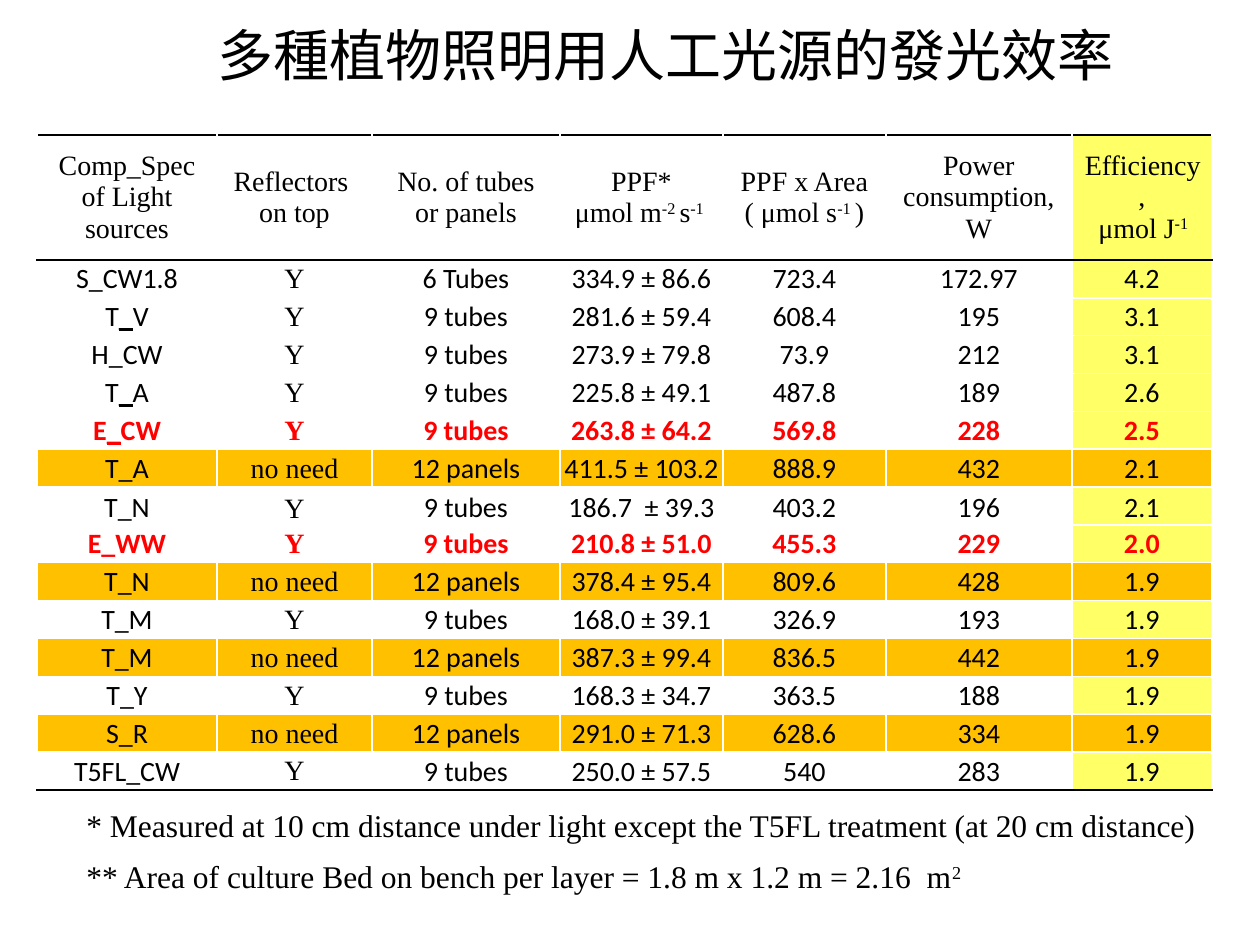
"""Builds a slide comparing the luminous efficiency of plant lighting sources."""
from lxml import etree
from pptx import Presentation, util as u
from pptx.dml.color import RGBColor
from pptx.enum import text
from pptx.oxml.ns import qn

PX = 914400 // 126
SERIF, SANS, CJK = "Times New Roman", "Calibri", "Noto Sans CJK SC"
BLACK, WHITE, RED, YELLOW, ORANGE = "000000", "FFFFFF", "FF0000", "FFFF66", "FFC000"

TITLE = "多種植物照明用人工光源的發光效率"
# "|" parts the runs: "^" raises a run, "~" underlines it, "\v" breaks the line.
HEADINGS = [
    "Comp_Spec of Light sources",
    "Reflectors |\v|on top",
    "No. of tubes or panels",
    "PPF*\nμmol m|^-2 |s|^-1 ",
    "PPF x Area\n( μmol s|^-1 |)",
    "Power consumption, W",
    "Efficiency,\n μmol J|^-1 ",
]
LIGHTS = [
    ("S_CW1.8", "Y", "6 Tubes", "334.9 ± 86.6", "723.4", "172.97", "4.2"),
    ("T|~_|V", "Y", "9 tubes", "281.6 ± 59.4", "608.4", "195", "3.1"),
    ("H_CW", "Y", "9 tubes", "273.9 ± 79.8", "73.9", "212", "3.1"),
    ("T|~_|A", "Y", "9 tubes", "225.8 ± 49.1", "487.8", "189", "2.6"),
    ("E|~_|CW", "Y", "9 tubes", "263.8 ± 64.2", "569.8", "228", "2.5"),
    ("T_A", "no need", "12 panels", "411.5 ± 103.2", "888.9", "432", "2.1"),
    ("T_N", "Y", "9 tubes", "186.7  ± 39.3", "403.2", "196", "2.1"),
    ("E_WW", "Y", "9 tubes", "210.8 ± 51.0", "455.3", "229", "2.0"),
    ("T_N", "no need", "12 panels", "378.4 ± 95.4", "809.6", "428", "1.9"),
    ("T_M", "Y", "9 tubes", "168.0 ± 39.1", "326.9", "193", "1.9"),
    ("T_M", "no need", "12 panels", "387.3 ± 99.4", "836.5", "442", "1.9"),
    ("T_Y", "Y", "9 tubes", "168.3 ± 34.7", "363.5", "188", "1.9"),
    ("S_R", "no need", "12 panels", "291.0 ± 71.3", "628.6", "334", "1.9"),
    ("T5FL_CW", "Y", "9 tubes", "250.0 ± 57.5", "540", "283", "1.9"),
]
NOTES = [
    ("* Measured at 10 cm distance under light except the T5FL treatment (at 20 cm distance)", 800, 1147),
    ("** Area of culture Bed on bench per layer = 1.8 m x 1.2 m = 2.16  m|^2", 851, 926),
]
COLUMN_WIDTHS = [180, 155, 188, 163, 163, 186, 140]
TABLE_LEFT, TABLE_TOP, TABLE_HEIGHT, HEADING_HEIGHT = 37, 135, 655, 125
REFLECTOR, AREA, EFFICIENCY = 1, 4, 6
BOTTOM_ROW = 7


def color(value):
    return RGBColor.from_string(value)


def write(frame, markup, face, size, ink=BLACK, bold=False, align=text.PP_ALIGN.CENTER):
    for index, line in enumerate(markup.split("\n")):
        paragraph = frame.add_paragraph() if index else frame.paragraphs[0]
        paragraph.alignment = align
        font = paragraph.font
        font.name, font.size, font.bold = face, u.Pt(size), bold
        font.color.rgb = color(ink)
        for piece in line.split("|"):
            if piece == "\v":
                paragraph.add_line_break()
                continue
            run = paragraph.add_run()
            run.text = piece.lstrip("^~")
            run.font.name, run.font.size, run.font.bold = face, u.Pt(size), bold
            run.font.color.rgb = color(ink)
            if piece.startswith("^"):
                run._r.get_or_add_rPr().set("baseline", "30000")
            elif piece.startswith("~"):
                run.font.underline = True


def border(cell, top, bottom):
    properties = cell._tc.get_or_add_tcPr()
    for side, ink in (("L", WHITE), ("R", WHITE), ("T", top), ("B", bottom)):
        line = etree.SubElement(properties, qn(f"a:ln{side}"), w=str(u.Pt(1)))
        fill = etree.SubElement(line, qn("a:solidFill"))
        etree.SubElement(fill, qn("a:srgbClr"), val=ink)


def add_title(slide):
    title = slide.shapes.title
    title.left, title.top, title.width, title.height = (n * PX for n in (115, 16, 1102, 76))
    title.text_frame.vertical_anchor = text.MSO_ANCHOR.MIDDLE
    write(title.text_frame, TITLE, CJK, 32)
    run = title.text_frame.paragraphs[0].runs[0]
    etree.SubElement(run._r.get_or_add_rPr(), qn("a:ea"), typeface=CJK)


def add_lights(slide):
    rows = [HEADINGS, *LIGHTS]
    table = slide.shapes.add_table(
        len(rows), len(HEADINGS), TABLE_LEFT * PX, TABLE_TOP * PX,
        sum(COLUMN_WIDTHS) * PX, TABLE_HEIGHT * PX).table
    table.first_row = table.horz_banding = False
    for column, width in zip(table.columns, COLUMN_WIDTHS):
        column.width = width * PX
    light_height = (TABLE_HEIGHT - HEADING_HEIGHT) * PX // len(LIGHTS)
    for r, values in enumerate(rows):
        heading = r == 0
        table.rows[r].height = HEADING_HEIGHT * PX if heading else light_height
        panel = values[REFLECTOR] == "no need"
        own = values[0].startswith("E")
        top = BLACK if r < 2 else WHITE
        bottom = BLACK if r in (0, len(LIGHTS)) else WHITE
        for c, value in enumerate(values):
            cell = table.cell(r, c)
            border(cell, top, bottom)
            cell.fill.solid()
            cell.fill.fore_color.rgb = color(
                ORANGE if panel else YELLOW if c == EFFICIENCY else WHITE)
            cell.vertical_anchor = (
                text.MSO_ANCHOR.BOTTOM if r == BOTTOM_ROW else text.MSO_ANCHOR.MIDDLE)
            if not heading or c == AREA:
                cell.margin_left = cell.margin_right = cell.margin_top = PX
                cell.margin_bottom = 0
            write(cell.text_frame, value, SERIF if heading or c == REFLECTOR else SANS,
                  16, RED if own else BLACK, own)


def add_notes(slide):
    for note, top, width in NOTES:
        frame = slide.shapes.add_textbox(74 * PX, top * PX, width * PX, 50 * PX).text_frame
        frame.word_wrap = False
        frame.auto_size = text.MSO_AUTO_SIZE.SHAPE_TO_FIT_TEXT
        write(frame, note, SERIF, 18, align=text.PP_ALIGN.LEFT)


def main():
    deck = Presentation()
    deck.slide_width, deck.slide_height = 1260 * PX, 945 * PX
    slide = deck.slides.add_slide(deck.slide_layouts[5])
    add_title(slide)
    add_lights(slide)
    add_notes(slide)
    deck.save("out.pptx")


if __name__ == "__main__":
    main()
